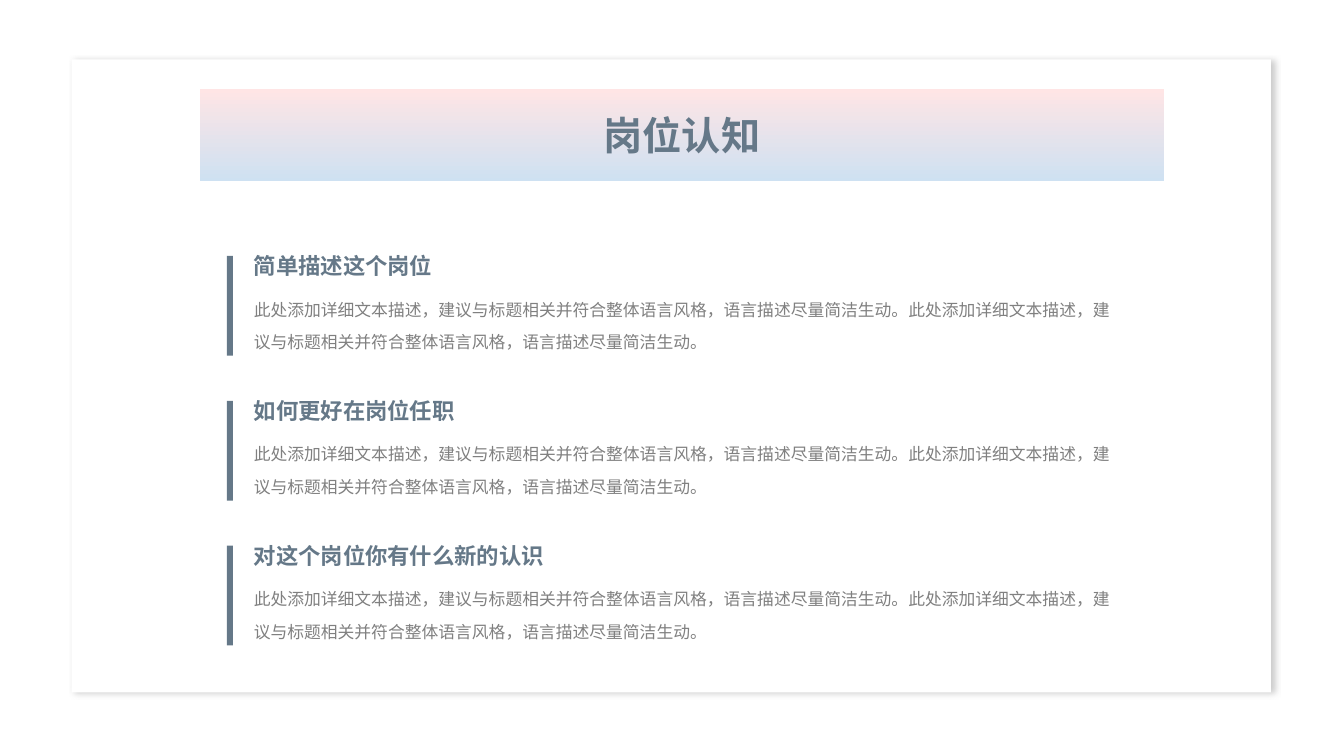
from lxml import etree
from pptx import Presentation
from pptx.dml.color import RGBColor
from pptx.enum.shapes import MSO_SHAPE as Shape
from pptx.enum.text import MSO_ANCHOR as Anchor, MSO_AUTO_SIZE as AutoSize, PP_ALIGN as Align
from pptx.oxml.ns import qn
from pptx.util import Pt

# Content
TITLE = "岗位认知"
HEADINGS = ["简单描述这个岗位", "如何更好在岗位任职", "对这个岗位你有什么新的认识"]
SENTENCE = "此处添加详细文本描述，建议与标题相关并符合整体语言风格，语言描述尽量简洁生动。"
DESCRIPTION = SENTENCE * 2

# Formats
FONT = "Noto Sans CJK JP"
SLATE, GRAY, WHITE = "657888", "808080", "FFFFFF"
PINK, BLUE = "FFE5E5", "CEE1F2"
TITLE_FORMAT = {"size": Pt(28), "bold": True, "name": FONT}
HEADING_FORMAT = {"size": Pt(16), "bold": True, "name": FONT}
BODY_FORMAT = {"size": Pt(12), "bold": False, "name": FONT}

# Layout in points: left, top, width, height
PANEL = (51.1, 42.4, 856.8, 452.2)
BANNER = (142.6, 63.4, 689, 66.2)
HEADING = (174.2, 176.4, 309.6, 26.6)
BODY = (174.2, 201.6, 635, 53.3)
BAR = (162, 182.8, 4.3, 71.3)
SECTION_STEP = 103.5


def color(value):
    return RGBColor.from_string(value)


def box(area, shift=0):
    left, top, width, height = area
    return Pt(left), Pt(top + shift), Pt(width), Pt(height)


def add_rectangle(shapes, area, fill, shift=0):
    shape = shapes.add_shape(Shape.RECTANGLE, *box(area, shift))
    shape.shadow.inherit = False
    shape.fill.solid()
    shape.fill.fore_color.rgb = color(fill)
    shape.line.fill.background()
    return shape


def write(shape, text, font_format, font_color, align, spacing=1.0):
    paragraph = shape.text_frame.paragraphs[0]
    paragraph.alignment = align
    paragraph.line_spacing = spacing
    run = paragraph.add_run()
    run.text = text
    for name, value in font_format.items():
        setattr(run.font, name, value)
    run.font.color.rgb = color(font_color)
    # East Asian typeface
    etree.SubElement(run.font._element, qn("a:ea"), typeface=FONT)


def add_text(shapes, area, shift, text, font_format, font_color, spacing=1.0):
    shape = shapes.add_textbox(*box(area, shift))
    shape.text_frame.word_wrap = True
    shape.text_frame.auto_size = AutoSize.SHAPE_TO_FIT_TEXT
    write(shape, text, font_format, font_color, Align.LEFT, spacing)


def add_shadow(shape):
    effects = shape._element.spPr.find(qn("a:effectLst"))
    shadow = etree.SubElement(effects, qn("a:outerShdw"), blurRad=str(Pt(4)),
                              dist=str(Pt(3)), dir=str(24 * 60000), algn="tl",
                              rotWithShape="0")
    tint = etree.SubElement(shadow, qn("a:srgbClr"), val=GRAY)
    etree.SubElement(tint, qn("a:alpha"), val="40000")


def main():
    presentation = Presentation()
    presentation.slide_width, presentation.slide_height = Pt(960), Pt(540)
    slide = presentation.slides.add_slide(presentation.slide_layouts[5])

    # White panel behind the title
    panel = add_rectangle(slide.shapes, PANEL, WHITE)
    add_shadow(panel)
    title = slide.shapes.title
    title._element.addprevious(panel._element)

    # Title banner
    title.left, title.top, title.width, title.height = box(BANNER)
    title.fill.gradient()
    title.fill.gradient_angle = 270
    for stop, value, position in zip(title.fill.gradient_stops, (PINK, BLUE), (0, 1)):
        stop.color.rgb = color(value)
        stop.position = position
    title.text_frame.vertical_anchor = Anchor.MIDDLE
    title.text_frame.auto_size = AutoSize.NONE
    write(title, TITLE, TITLE_FORMAT, SLATE, Align.CENTER)

    # Sections
    for index, heading in enumerate(HEADINGS):
        shift = index * SECTION_STEP
        section = slide.shapes.add_group_shape().shapes
        add_text(section, HEADING, shift, heading, HEADING_FORMAT, SLATE)
        add_text(section, BODY, shift, DESCRIPTION, BODY_FORMAT, GRAY, 1.6)
        add_rectangle(section, BAR, SLATE, shift)

    presentation.save("out.pptx")


if __name__ == "__main__":
    main()
